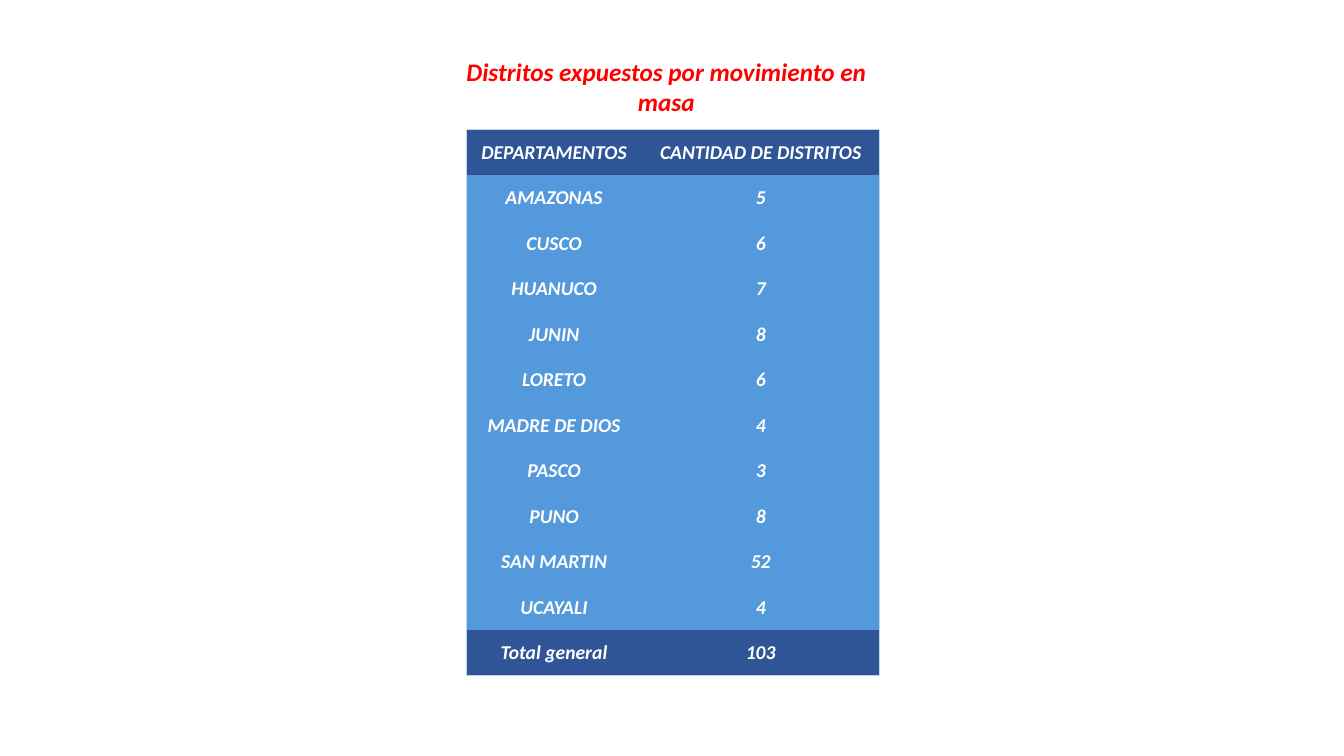
from lxml import etree
from pptx import Presentation, util as u
from pptx.dml.color import RGBColor
from pptx.enum import text
from pptx.oxml.ns import qn

TITLE = "Distritos expuestos por movimiento en masa"
HEADER = ("DEPARTAMENTOS", "CANTIDAD DE DISTRITOS")
DISTRICTS = {
    "AMAZONAS": 5, "CUSCO": 6, "HUANUCO": 7, "JUNIN": 8, "LORETO": 6,
    "MADRE DE DIOS": 4, "PASCO": 3, "PUNO": 8, "SAN MARTIN": 52, "UCAYALI": 4,
}
TOTAL_LABEL = "Total general"

RED, WHITE, NAVY, BLUE, EDGE = "FF0000", "FFFFFF", "2F5597", "5499DB", "C4D5EB"
COLUMN_WIDTHS = (1.75, 2.35)
TABLE_LEFT, TABLE_TOP, TABLE_HEIGHT = 4.62, 1.28, 5.42
NO_STYLE = "{2D5ABB26-0587-4C30-8999-92F81FD0307C}"


def color(value):
    return RGBColor.from_string(value)


def write(frame, content, size, ink):
    frame.text = content
    paragraph = frame.paragraphs[0]
    paragraph.alignment = text.PP_ALIGN.CENTER
    font = paragraph.runs[0].font
    font.name, font.size = "Calibri", u.Pt(size)
    font.bold = font.italic = True
    font.color.rgb = color(ink)


def add_borders(cell, sides):
    """Draw thin lines on the given sides, listed in the order L, R, T, B."""
    properties = cell._tc.get_or_add_tcPr()
    for position, side in enumerate(sides):
        line = etree.Element(qn(f"a:ln{side}"), w=str(u.Pt(0.5)))
        fill = etree.SubElement(line, qn("a:solidFill"))
        etree.SubElement(fill, qn("a:srgbClr"), val=EDGE)
        properties.insert(position, line)


def add_title(slide):
    title = slide.shapes.add_textbox(u.Inches(4.22), u.Inches(0.51), u.Inches(4.9), u.Inches(0.4))
    frame = title.text_frame
    frame.word_wrap = False
    frame.auto_size = text.MSO_AUTO_SIZE.SHAPE_TO_FIT_TEXT
    frame.margin_right = u.Inches(0.22)
    write(frame, TITLE, 18, RED)


def add_district_table(slide):
    rows = [HEADER, *DISTRICTS.items(), (TOTAL_LABEL, sum(DISTRICTS.values()))]
    last = len(rows) - 1
    frame = slide.shapes.add_table(
        len(rows), len(HEADER), u.Inches(TABLE_LEFT), u.Inches(TABLE_TOP),
        u.Inches(sum(COLUMN_WIDTHS)), u.Inches(TABLE_HEIGHT))
    table = frame.table
    table._tbl.tblPr.find(qn("a:tableStyleId")).text = NO_STYLE
    for column, width in zip(table.columns, COLUMN_WIDTHS):
        column.width = u.Inches(width)

    for r, values in enumerate(rows):
        table.rows[r].height = u.Inches(TABLE_HEIGHT / len(rows))
        for c, value in enumerate(values):
            cell = table.cell(r, c)
            cell.margin_left = cell.margin_right = cell.margin_top = u.Inches(0.01)
            cell.margin_bottom = 0
            cell.vertical_anchor = text.MSO_ANCHOR.MIDDLE
            cell.fill.solid()
            cell.fill.fore_color.rgb = color(NAVY if r in (0, last) else BLUE)
            write(cell.text_frame, str(value), 14, WHITE)
            add_borders(cell, "LR"[c] + {0: "T", last: "B"}.get(r, ""))


def main():
    deck = Presentation()
    deck.slide_width, deck.slide_height = u.Inches(13.33), u.Inches(7.5)
    slide = deck.slides.add_slide(deck.slide_layouts[6])
    add_title(slide)
    add_district_table(slide)
    deck.save("out.pptx")


if __name__ == "__main__":
    main()
